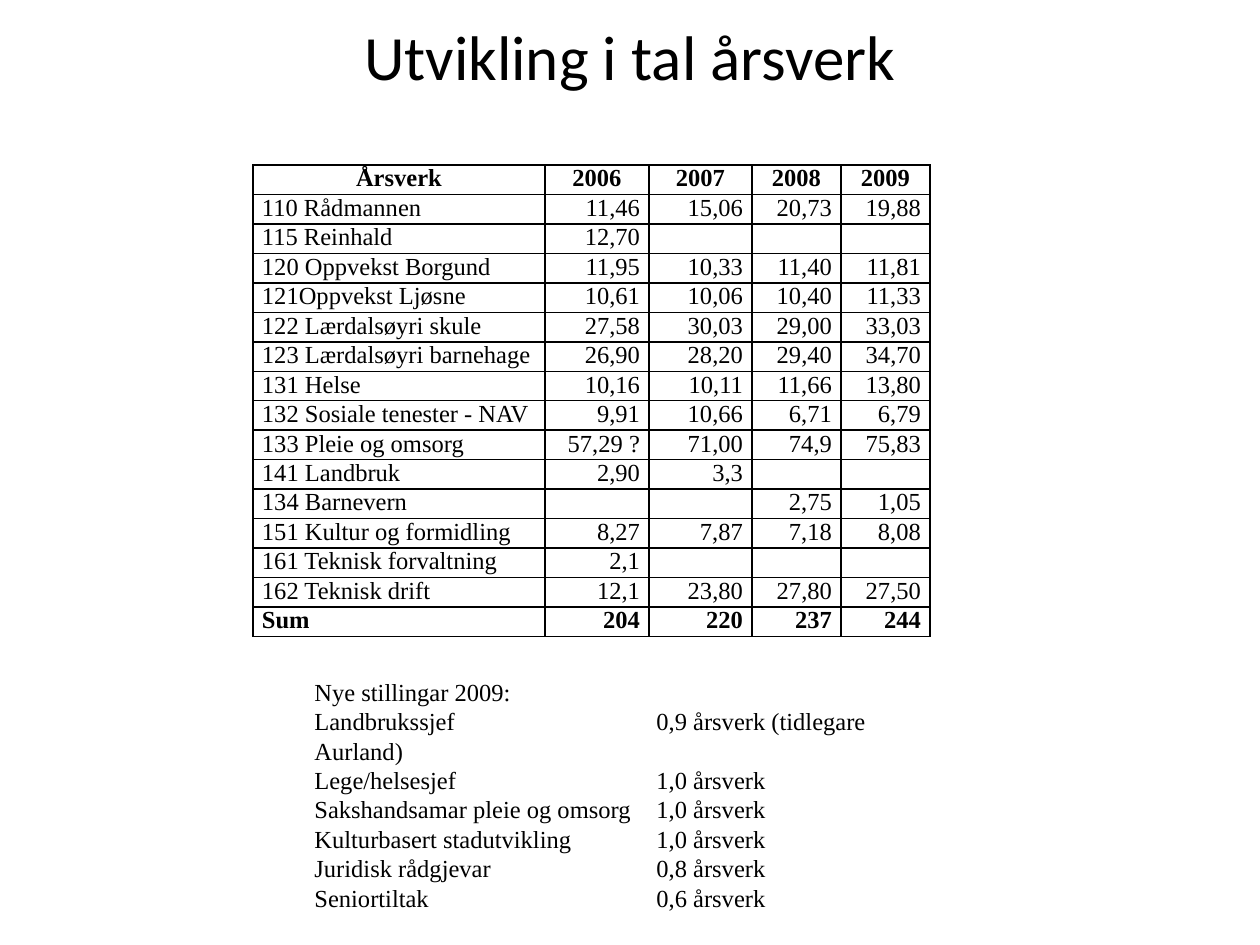
from dataclasses import dataclass

from lxml import etree
from pptx import Presentation
from pptx.dml.color import RGBColor
from pptx.enum.text import MSO_ANCHOR, PP_ALIGN
from pptx.oxml.ns import qn
from pptx.util import Emu, Pt

PX = 914400 // 126
LEFT, CENTER, RIGHT = PP_ALIGN.LEFT, PP_ALIGN.CENTER, PP_ALIGN.RIGHT
MIDDLE = MSO_ANCHOR.MIDDLE


@dataclass(frozen=True)
class Theme:
    ink: str = "000000"
    title_font: str = "Calibri"
    body_font: str = "Times New Roman"
    title_size: int = 36
    body_size: int = 14
    line_pitch: float = 16.8
    border_width: int = 1


THEME = Theme()

COLUMN_WIDTHS = [292, 104, 103, 89, 89]
ROW_HEIGHT = 27
CELL_MARGIN = 9
STAFFING = [
    ["Årsverk", "2006", "2007", "2008", "2009"],
    ["110 Rådmannen", "11,46", "15,06", "20,73", "19,88"],
    ["115 Reinhald", "12,70", "", "", ""],
    ["120 Oppvekst Borgund", "11,95", "10,33", "11,40", "11,81"],
    ["121Oppvekst Ljøsne", "10,61", "10,06", "10,40", "11,33"],
    ["122 Lærdalsøyri skule", "27,58", "30,03", "29,00", "33,03"],
    ["123 Lærdalsøyri barnehage", "26,90", "28,20", "29,40", "34,70"],
    ["131 Helse", "10,16", "10,11", "11,66", "13,80"],
    ["132 Sosiale tenester - NAV", "9,91", "10,66", "6,71", "6,79"],
    ["133 Pleie og omsorg", "57,29 ?", "71,00", "74,9", "75,83"],
    ["141 Landbruk", "2,90", "3,3", "", ""],
    ["134 Barnevern", "", "", "2,75", "1,05"],
    ["151 Kultur og formidling", "8,27", "7,87", "7,18", "8,08"],
    ["161 Teknisk forvaltning", "2,1", "", "", ""],
    ["162 Teknisk drift", "12,1", "23,80", "27,80", "27,50"],
    ["Sum", "204", "220", "237", "244"],
]

AMOUNT_TAB = 342
POSITIONS_HEADING = "Nye stillingar 2009:"
NEW_POSITIONS = [
    ("Landbrukssjef", "0,9 årsverk (tidlegare Aurland)"),
    ("Lege/helsesjef", "1,0 årsverk"),
    ("Sakshandsamar pleie og omsorg", "1,0 årsverk"),
    ("Kulturbasert stadutvikling", "1,0 årsverk"),
    ("Juridisk rådgjevar", "0,8 årsverk"),
    ("Seniortiltak", "0,6 årsverk"),
]


def px(length):
    return Emu(length * PX)


def format_runs(paragraph, font, size, bold=False):
    for run in paragraph.runs:
        run.font.name = font
        run.font.size = Pt(size)
        run.font.bold = bold
        run.font.color.rgb = RGBColor.from_string(THEME.ink)


def add_text_box(slide, box):
    text_frame = slide.shapes.add_textbox(*map(px, box)).text_frame
    text_frame.word_wrap = True
    text_frame.vertical_anchor = MIDDLE
    return text_frame


def add_title(slide, box):
    text_frame = add_text_box(slide, box)
    text_frame.text = "Utvikling i tal årsverk"
    paragraph = text_frame.paragraphs[0]
    paragraph.alignment = CENTER
    format_runs(paragraph, THEME.title_font, THEME.title_size)


def set_borders(cell):
    properties = cell._tc.get_or_add_tcPr()
    for position, side in enumerate(("a:lnL", "a:lnR", "a:lnT", "a:lnB")):
        line = etree.Element(qn(side), w=str(Pt(THEME.border_width)))
        fill = etree.SubElement(line, qn("a:solidFill"))
        etree.SubElement(fill, qn("a:srgbClr"), val=THEME.ink)
        properties.insert(position, line)


def fill_cell(cell, text, alignment, bold):
    cell.fill.background()
    set_borders(cell)
    cell.margin_left = cell.margin_right = px(CELL_MARGIN)
    cell.margin_top = cell.margin_bottom = 0
    cell.text_frame.text = text
    paragraph = cell.text_frame.paragraphs[0]
    paragraph.alignment = alignment
    format_runs(paragraph, THEME.body_font, THEME.body_size, bold)
    if not text:
        # An empty cell takes its line height from the paragraph end mark
        end_mark = etree.SubElement(paragraph._p, qn("a:endParaRPr"),
                                    sz=str(THEME.body_size * 100))
        etree.SubElement(end_mark, qn("a:latin"), typeface=THEME.body_font)


def add_staffing_table(slide, left, top):
    last_row = len(STAFFING) - 1
    table = slide.shapes.add_table(
        len(STAFFING), len(COLUMN_WIDTHS), px(left), px(top),
        px(sum(COLUMN_WIDTHS)), px(ROW_HEIGHT * len(STAFFING))).table
    table.horz_banding = False
    for column, width in zip(table.columns, COLUMN_WIDTHS):
        column.width = px(width)
    for row_index, values in enumerate(STAFFING):
        table.rows[row_index].height = px(ROW_HEIGHT)
        for column_index, text in enumerate(values):
            if row_index == 0:
                alignment = CENTER
            else:
                alignment = RIGHT if column_index else LEFT
            fill_cell(table.cell(row_index, column_index), text, alignment,
                      bold=row_index in (0, last_row))


def add_new_positions(slide, box):
    text_frame = add_text_box(slide, box)
    lines = [POSITIONS_HEADING] + ["\t".join(pair) for pair in NEW_POSITIONS]
    text_frame.text = "\n".join(lines)
    for paragraph in text_frame.paragraphs:
        paragraph.line_spacing = Pt(THEME.line_pitch)
        format_runs(paragraph, THEME.body_font, THEME.body_size)
        # Tab stop that lines up the amounts
        tabs = etree.SubElement(paragraph._p.get_or_add_pPr(), qn("a:tabLst"))
        etree.SubElement(tabs, qn("a:tab"), pos=str(px(AMOUNT_TAB)), algn="l")


def main():
    presentation = Presentation()
    presentation.slide_width = px(1260)
    presentation.slide_height = px(945)
    slide = presentation.slides.add_slide(presentation.slide_layouts[6])

    add_title(slide, (63, -4, 1134, 118))
    add_staffing_table(slide, 253, 165)
    add_new_positions(slide, (302, 669, 586, 251))

    presentation.save("out.pptx")


if __name__ == "__main__":
    main()
